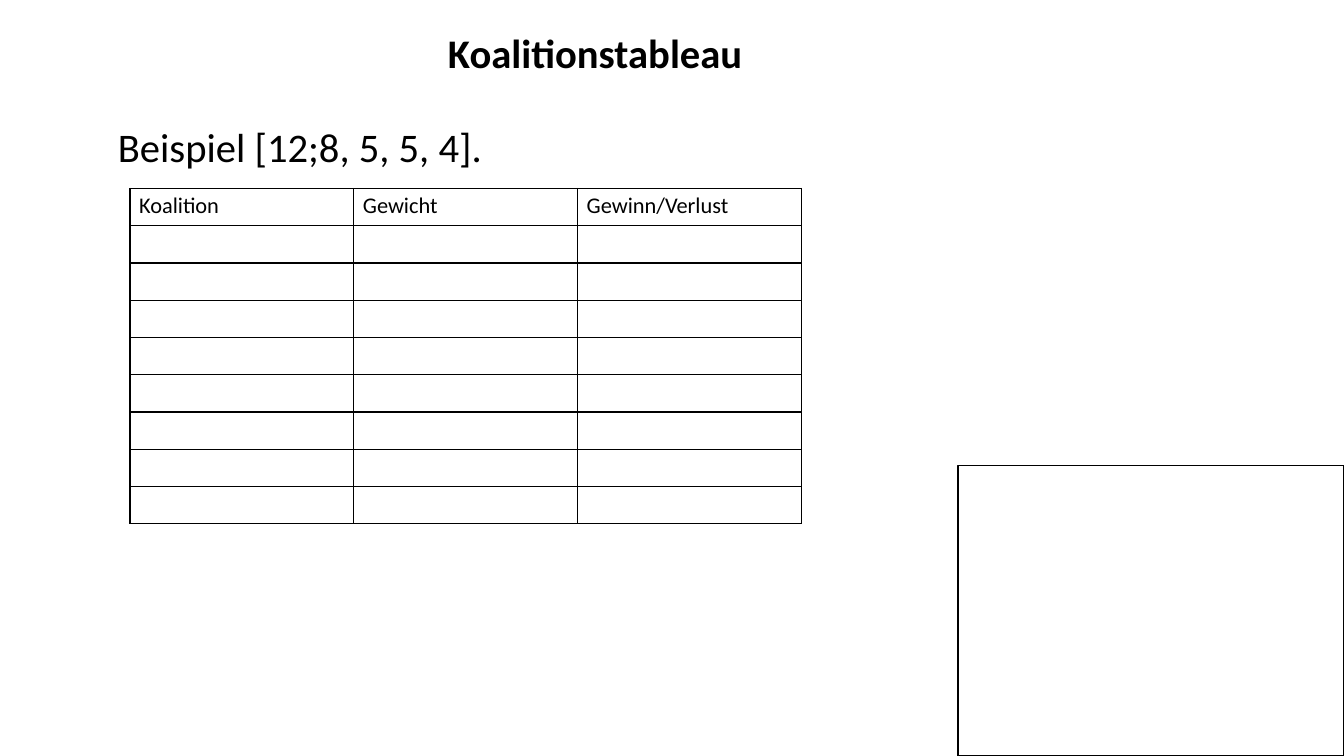
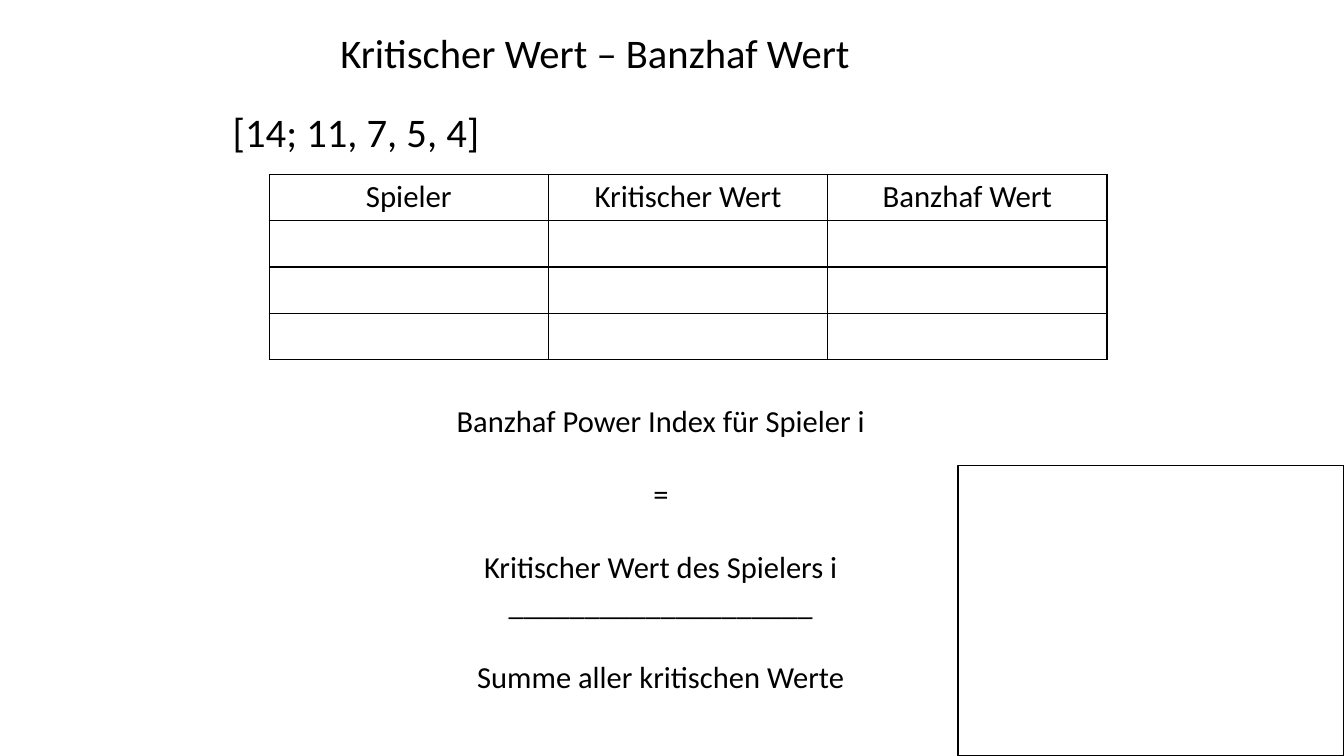
from dataclasses import dataclass

from lxml import etree
from pptx import Presentation
from pptx import util as u
from pptx.dml.color import RGBColor
from pptx.enum import shapes, text
from pptx.oxml.ns import qn


@dataclass(frozen=True)
class Theme:
    font: str = "Calibri"
    ink: RGBColor = RGBColor(0, 0, 0)
    heading: float = 29
    formula: float = 21.8
    formula_pitch: float = 26.1
    line: float = 1


THEME = Theme()
SLIDE_WIDTH, SLIDE_HEIGHT = 13.33, 7.5
TITLE_BOX = (1.75, 0.11, 8.31, 0.81)
FRAME_LEFT, FRAME_TOP = 9.5, 4.62
FORMULA_BOX = (1.68, 3.94, 9.75, 3.07)
LEFT, CENTER = text.PP_ALIGN.LEFT, text.PP_ALIGN.CENTER

SLIDES = [
    {
        "title": "Koalitionstableau",
        "bold": True,
        "game": "Beispiel [12;8, 5, 5, 4].",
        "game_box": (1.07, 1.16, 7.39, 0.57),
        "header": ("Koalition", "Gewicht", "Gewinn/Verlust"),
        "empty_rows": 8,
        "table_at": (1.29, 1.87),
        "cell": (2.22, 0.37),
        "cell_size": 16,
        "align": LEFT,
        "formula": [],
    },
    {
        "title": "Kritischer Wert – Banzhaf Wert",
        "bold": False,
        "game": "[14; 11, 7, 5, 4]",
        "game_box": (2.21, 1.01, 7.39, 0.71),
        "header": ("Spieler", "Kritischer Wert", "Banzhaf Wert"),
        "empty_rows": 3,
        "table_at": (2.67, 1.73),
        "cell": (2.77, 0.46),
        "cell_size": 22,
        "align": CENTER,
        "formula": [
            ("Banzhaf Power Index für Spieler i", 0),
            ("=", 1),
            ("Kritischer Wert des Spielers i", 1),
            ("_" * 20, 0),
            ("Summe aller kritischen Werte", 1),
        ],
    },
]


def inches(*lengths):
    return [u.Inches(length) for length in lengths]


def style(paragraph, size, align=LEFT, bold=False):
    paragraph.alignment = align
    font = paragraph.font
    font.name, font.size, font.bold = THEME.font, u.Pt(size), bold
    font.color.rgb = THEME.ink


def add_title(slide, title, bold):
    shape = slide.shapes.title
    shape.left, shape.top, shape.width, shape.height = inches(*TITLE_BOX)
    frame = shape.text_frame
    frame.text = title
    frame.auto_size = text.MSO_AUTO_SIZE.NONE
    frame.vertical_anchor = text.MSO_ANCHOR.MIDDLE
    style(frame.paragraphs[0], THEME.heading, CENTER, bold)


def add_text(slide, box, lines, size, align=LEFT, pitch=None):
    frame = slide.shapes.add_textbox(*inches(*box)).text_frame
    frame.word_wrap = True
    for index, (line, gap_lines) in enumerate(lines):
        paragraph = frame.add_paragraph() if index else frame.paragraphs[0]
        paragraph.text = line
        style(paragraph, size, align)
        if pitch:
            paragraph.line_spacing = u.Pt(pitch)
            paragraph.space_before = u.Pt(gap_lines * pitch)


def add_borders(cell):
    properties = cell._tc.get_or_add_tcPr()
    for position, side in enumerate(("lnL", "lnR", "lnT", "lnB")):
        line = etree.Element(qn(f"a:{side}"), w=str(u.Pt(THEME.line)))
        fill = etree.SubElement(line, qn("a:solidFill"))
        etree.SubElement(fill, qn("a:srgbClr"), val=str(THEME.ink))
        properties.insert(position, line)


def add_grid(slide, content):
    header = content["header"]
    rows, columns = content["empty_rows"] + 1, len(header)
    width, height = content["cell"]
    size = content["cell_size"]
    table = slide.shapes.add_table(
        rows, columns,
        *inches(*content["table_at"], columns * width, rows * height)).table
    table.first_row = table.horz_banding = False
    for column in table.columns:
        column.width = u.Inches(width)
    for row in table.rows:
        row.height = u.Inches(height)
    for index, cell in enumerate(table.iter_cells()):
        cell.fill.background()
        cell.margin_left = cell.margin_right = u.Inches(0.09)
        cell.margin_top = cell.margin_bottom = u.Inches(0.04)
        paragraph = cell.text_frame.paragraphs[0]
        if index < columns:
            paragraph.text = header[index]
        style(paragraph, size, content["align"])
        etree.SubElement(paragraph._p, qn("a:endParaRPr"), sz=str(size * 100))
        add_borders(cell)


def add_frame(slide):
    frame = slide.shapes.add_shape(
        shapes.MSO_SHAPE.RECTANGLE,
        *inches(FRAME_LEFT, FRAME_TOP,
                SLIDE_WIDTH - FRAME_LEFT, SLIDE_HEIGHT - FRAME_TOP))
    frame.shadow.inherit = False
    frame.fill.background()
    frame.line.color.rgb = THEME.ink
    frame.line.width = u.Pt(THEME.line)


def main():
    presentation = Presentation()
    presentation.slide_width, presentation.slide_height = inches(SLIDE_WIDTH, SLIDE_HEIGHT)
    title_only = presentation.slide_layouts.get_by_name("Title Only")
    for content in SLIDES:
        slide = presentation.slides.add_slide(title_only)
        add_title(slide, content["title"], content["bold"])
        add_text(slide, content["game_box"], [(content["game"], 0)], THEME.heading)
        add_grid(slide, content)
        if content["formula"]:
            add_text(slide, FORMULA_BOX, content["formula"], THEME.formula,
                     CENTER, THEME.formula_pitch)
        add_frame(slide)
    presentation.save("out.pptx")


if __name__ == "__main__":
    main()
